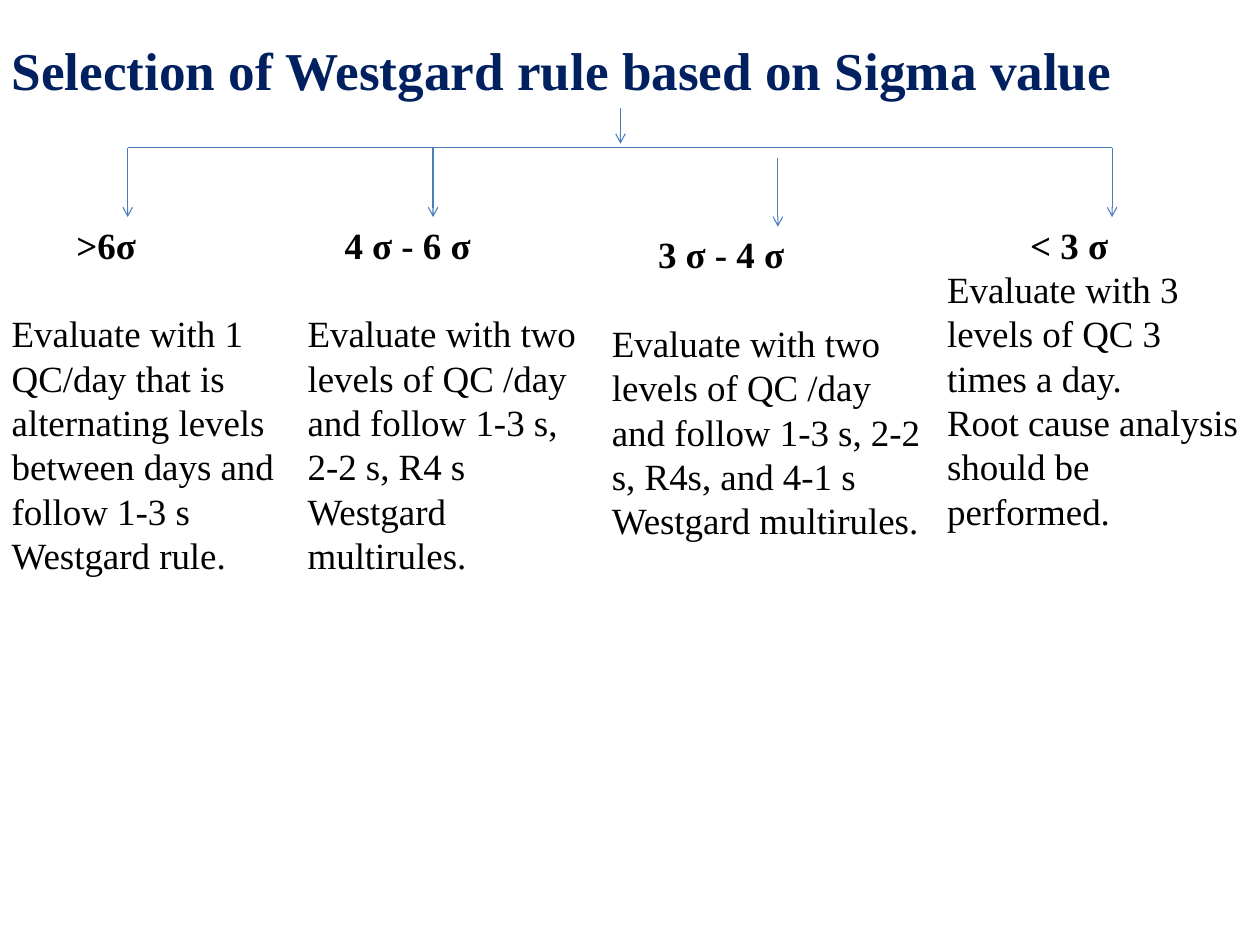
from dataclasses import dataclass

from lxml import etree
from pptx import Presentation
from pptx import util as u
from pptx.dml.color import RGBColor
from pptx.enum import shapes, text
from pptx.oxml import ns

NAVY = RGBColor(0x00, 0x20, 0x60)
BLACK = RGBColor(0x00, 0x00, 0x00)
BLUE = RGBColor(0x4B, 0x7E, 0xBC)
FONT = "Times New Roman"
LINE_HEIGHT = 30
BAR_Y = 100.1
ARROW_LENGTH = 46.8
TRUNK_X = 419.8


@dataclass(frozen=True)
class SigmaColumn:
    heading: str
    advice: tuple[str, ...]
    left: float
    width: float
    height: float
    arrow_x: float
    indent: float
    top: float = 146.9
    heading_gap: float = LINE_HEIGHT


@dataclass(frozen=True)
class Line:
    x1: float
    y1: float
    x2: float
    y2: float
    arrow: bool = False


COLUMNS = (
    SigmaColumn(">6σ", ("Evaluate with 1 QC/day that is alternating levels between days "
                        "and follow 1-3 s Westgard rule.",),
                0, 200.2, 280, 86.4, 43.75),
    SigmaColumn("4 σ - 6 σ", ("Evaluate with two levels of QC /day and follow "
                              "1‑3 s, 2‑2 s, R4 s Westgard multirules.",),
                200.2, 219.6, 250, 293, 25),
    SigmaColumn("3 σ - 4 σ", ("Evaluate with two levels of QC /day and follow "
                              "1‑3 s, 2‑2 s, R4s, and 4‑1 s Westgard multirules.",),
                406.1, 226.8, 220, 526.3, 31.25, top=153.4),
    SigmaColumn("< 3 σ", ("Evaluate with 3 levels of QC 3 times a day.",
                          "Root cause analysis should be performed."),
                632.9, 219.6, 220, 752.4, 56.25, heading_gap=0),
)


def write(paragraph, content: str, *, size: float = 25, color: RGBColor = BLACK,
          bold: bool = False, indent: float = 0, gap: float = 0,
          line_height: float | None = LINE_HEIGHT) -> None:
    """Fill a paragraph with one formatted run."""
    run = paragraph.add_run()
    run.text = content
    run.font.name = FONT
    run.font.size = u.Pt(size)
    run.font.bold = bold
    run.font.color.rgb = color
    paragraph.alignment = text.PP_ALIGN.LEFT
    paragraph.space_before = u.Pt(0)
    paragraph.space_after = u.Pt(gap)
    if line_height:
        paragraph.line_spacing = u.Pt(line_height)
    if indent:
        paragraph._p.get_or_add_pPr().set("marL", str(u.Pt(indent)))


def set_margins(frame) -> None:
    frame.margin_left = frame.margin_right = u.Pt(7.9)
    frame.margin_top = frame.margin_bottom = u.Pt(3.6)
    frame.word_wrap = True


def draw_line(slide, line: Line) -> None:
    connector = slide.shapes.add_connector(
        shapes.MSO_CONNECTOR.STRAIGHT,
        u.Pt(line.x1), u.Pt(line.y1), u.Pt(line.x2), u.Pt(line.y2))
    connector.line.color.rgb = BLUE
    connector.line.width = u.Pt(0.75)
    if line.arrow:
        etree.SubElement(connector.line._get_or_add_ln(), ns.qn("a:tailEnd"), type="arrow")
    etree.SubElement(connector._element.spPr, ns.qn("a:effectLst"))


def draw_column(slide, column: SigmaColumn) -> None:
    box = slide.shapes.add_textbox(u.Pt(column.left), u.Pt(column.top),
                                   u.Pt(column.width), u.Pt(column.height))
    frame = box.text_frame
    set_margins(frame)
    frame.auto_size = text.MSO_AUTO_SIZE.SHAPE_TO_FIT_TEXT
    write(frame.paragraphs[0], column.heading, bold=True,
          indent=column.indent, gap=column.heading_gap)
    for sentence in column.advice:
        write(frame.add_paragraph(), sentence)


def main() -> None:
    presentation = Presentation()
    presentation.slide_width = u.Pt(852.5)
    presentation.slide_height = u.Pt(639.4)
    slide = presentation.slides.add_slide(presentation.slide_layouts[5])

    # Title
    title = slide.shapes.title
    title.left, title.top = u.Pt(0), u.Pt(0)
    title.width, title.height = presentation.slide_width, u.Pt(93.6)
    frame = title.text_frame
    set_margins(frame)
    frame.auto_size = text.MSO_AUTO_SIZE.NONE
    frame.vertical_anchor = text.MSO_ANCHOR.MIDDLE
    write(frame.paragraphs[0], "Selection of Westgard rule based on Sigma value",
          size=36, color=NAVY, bold=True, line_height=None)

    # Trunk arrow and the two halves of the bar
    draw_line(slide, Line(TRUNK_X, 73.4, TRUNK_X, 97.2, arrow=True))
    draw_line(slide, Line(TRUNK_X, BAR_Y, COLUMNS[-1].arrow_x, BAR_Y))
    draw_line(slide, Line(COLUMNS[0].arrow_x, BAR_Y, 426.2, BAR_Y))

    # Branch arrows, each ending at the top of its column
    for column in COLUMNS:
        draw_line(slide, Line(column.arrow_x, column.top - ARROW_LENGTH,
                              column.arrow_x, column.top, arrow=True))

    # Sigma ranges and advice
    for column in COLUMNS:
        draw_column(slide, column)

    presentation.save("out.pptx")


if __name__ == "__main__":
    main()
